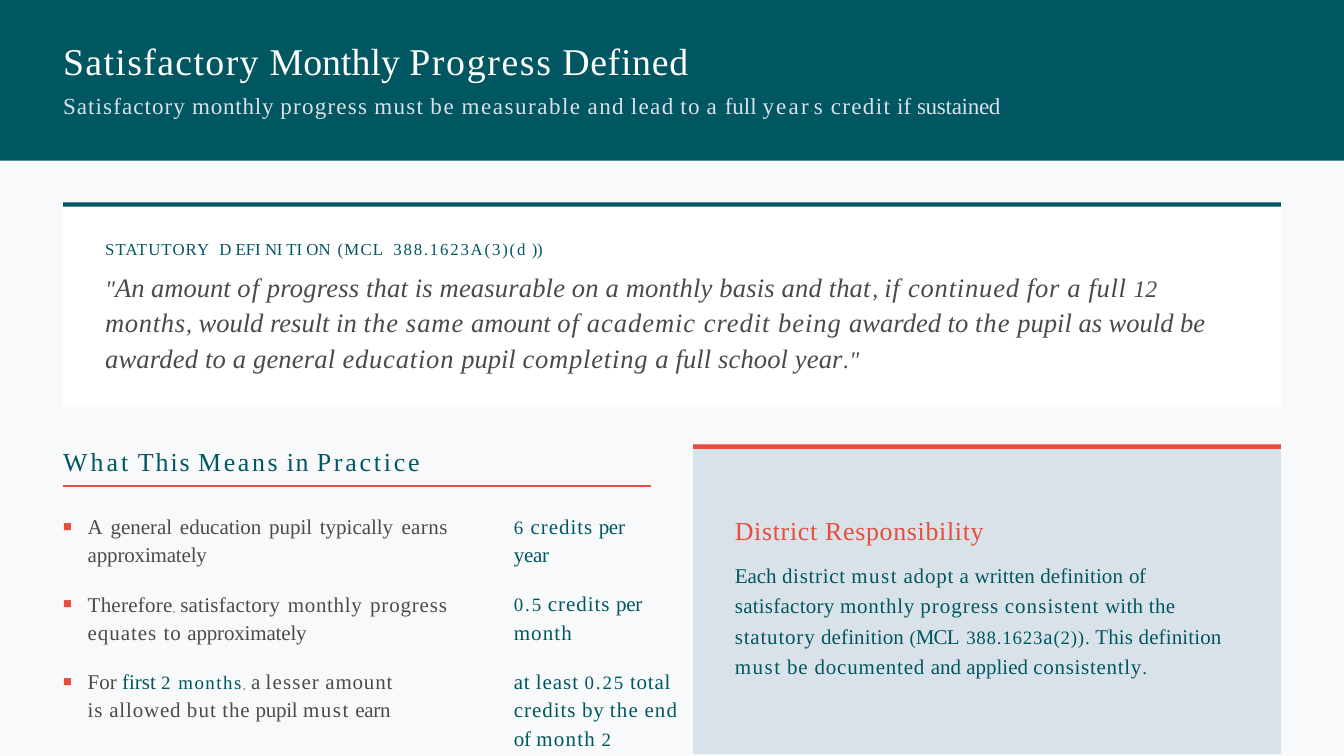
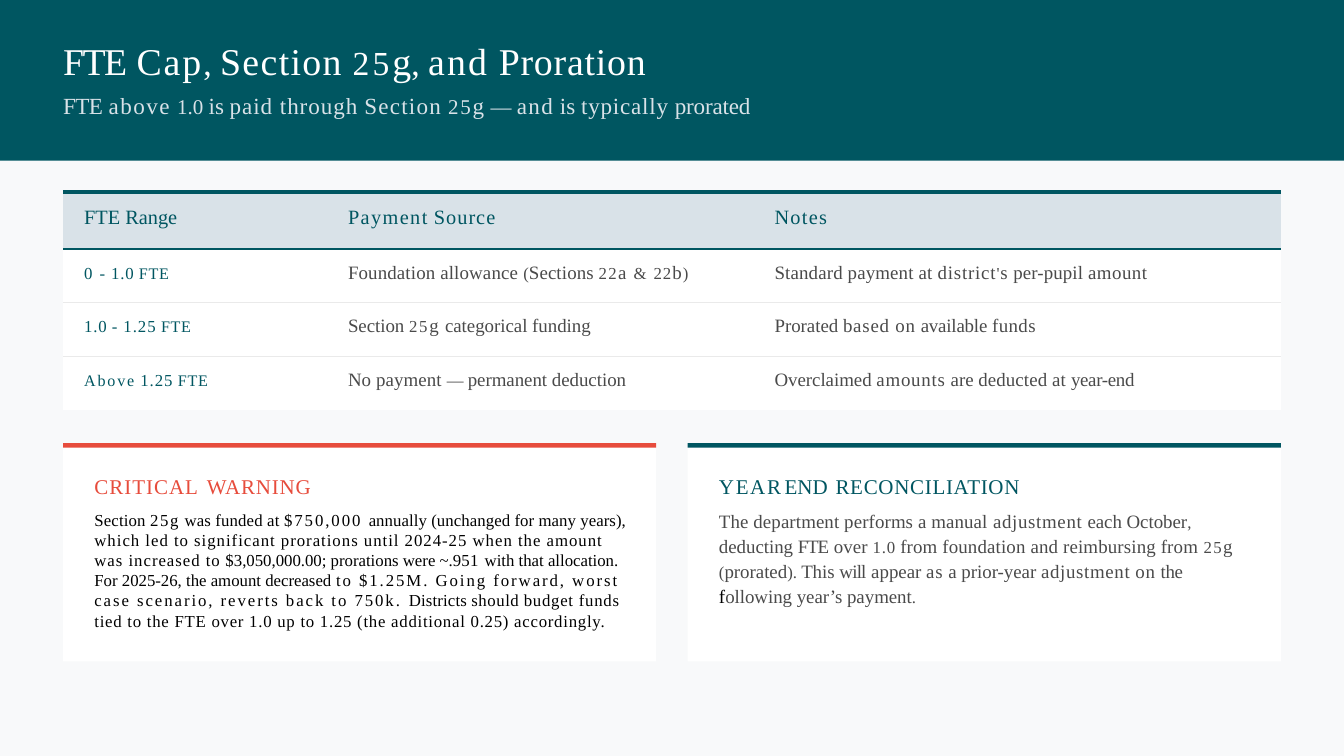
import pptx
import pptx.util
import pptx.dml.color
import pptx.enum.shapes
import pptx.enum.text
import pptx.oxml.ns
from lxml import etree

Cm, Pt = pptx.util.Cm, pptx.util.Pt
RGBColor = pptx.dml.color.RGBColor
qn = pptx.oxml.ns.qn
ALIGN = pptx.enum.text.PP_ALIGN
ANCHOR = pptx.enum.text.MSO_ANCHOR

TEAL = RGBColor(0x00, 0x56, 0x61)
RED = RGBColor(0xE7, 0x4C, 0x3C)
MIST = RGBColor(0xD9, 0xE2, 0xE8)
PAPER = RGBColor(0xF8, 0xF9, 0xFA)
WHITE = RGBColor(0xFF, 0xFF, 0xFF)
GREY = RGBColor(0x4A, 0x4A, 0x4A)
BLACK = RGBColor(0x00, 0x00, 0x00)
HAIR = RGBColor(0xEA, 0xEA, 0xEA)

FONT = "Times New Roman"
SLIDE_W, SLIDE_H = 33.87, 19.05
LEFT, WIDTH = 1.59, 30.69
BAR_H = 0.11
BREAK = ("\n",)

TITLE = dict(size=27, color=WHITE)
SUBTITLE = dict(size=16.5, color=MIST, line=20, before=5.6)
LABEL = dict(size=12, color=TEAL, line=14)
QUOTE = dict(size=19, color=GREY, line=25.4, before=6.1, italic=True)
HEADING = dict(size=18.5, color=TEAL)
ITEM = dict(size=15, color=GREY, line=20.2)
VALUE = dict(size=15, color=TEAL, line=20.2)
CARD_HEAD = dict(size=15, color=TEAL)
NO_STYLE = "{2D5ABB26-0587-4C30-8999-92F81FD0307C}"


def set_all(obj, values):
    """Set every attribute named in a dict."""
    for name, value in values.items():
        setattr(obj, name, value)


def add_runs(p, runs, size, color, italic=False):
    """Write (text, spacing, size, color) runs, leaving trailing spaces untracked."""
    for run in runs:
        if run == BREAK:
            p.add_line_break()
            continue
        text, spacing, own_size, own_color = (*run, None, None, None)[:4]
        word = text.rstrip(" ") if spacing else text
        parts = [(word, spacing), (text[len(word):], None)] if word else [(text, spacing)]
        for part, tracking in parts:
            if not part:
                continue
            r = p.add_run()
            r.text = part
            set_all(r.font, dict(name=FONT, size=Pt(own_size or size), italic=italic,
                                 bold=False))
            r.font.color.rgb = own_color or color
            if tracking:
                r.font._element.set("spc", str(round(tracking * 100)))


def add_bullet(p):
    """Give a paragraph a small red square and a hanging indent."""
    pPr = p._p.get_or_add_pPr()
    pPr.set("marL", str(Cm(0.62)))
    pPr.set("indent", str(-Cm(0.62)))
    color = etree.SubElement(pPr, qn("a:buClr"))
    etree.SubElement(color, qn("a:srgbClr"), val=str(RED))
    etree.SubElement(pPr, qn("a:buSzPct"), val="70000")
    etree.SubElement(pPr, qn("a:buChar"), char="■")


def fill_text(tf, paras, bullets=False):
    """Fill a text frame with (style, runs) paragraphs."""
    set_all(tf, dict(margin_left=0, margin_right=0, margin_top=0, margin_bottom=0,
                     word_wrap=True, vertical_anchor=ANCHOR.TOP,
                     auto_size=pptx.enum.text.MSO_AUTO_SIZE.NONE))
    for i, (style, runs) in enumerate(paras):
        p = tf.add_paragraph() if i else tf.paragraphs[0]
        style = dict(style)
        line = style.pop("line", style["size"] * 1.2)
        set_all(p, dict(alignment=style.pop("align", ALIGN.LEFT), line_spacing=Pt(line),
                        space_before=Pt(style.pop("before", 0)), space_after=Pt(0)))
        if bullets:
            add_bullet(p)
        add_runs(p, runs, **style)


def place(sp, x, y, w, h):
    """Move and size a shape in centimetres."""
    set_all(sp, dict(left=Cm(x), top=Cm(y), width=Cm(w), height=Cm(h)))


def add_text(s, x, y, w, h, paras):
    """Add a text box."""
    fill_text(s.shapes.add_textbox(Cm(x), Cm(y), Cm(w), Cm(h)).text_frame, paras)


def add_block(s, x, y, w, h, color):
    """Add a plain filled rectangle."""
    sp = s.shapes.add_shape(pptx.enum.shapes.MSO_SHAPE.RECTANGLE, Cm(x), Cm(y), Cm(w), Cm(h))
    sp.shadow.inherit = False
    sp.fill.solid()
    sp.fill.fore_color.rgb = color
    sp.line.fill.background()
    return sp


def add_card(s, x, y, w, h, fill, bar, inset, text_w, paras):
    """Add a card with a coloured top bar and inset text."""
    add_block(s, x, y, w, h, fill)
    add_block(s, x, y, w, BAR_H, bar)
    dx, dy = inset
    add_text(s, x + dx, y + dy, text_w, h - 2 * dy, paras)


def new_slide(prs, layout, title, subtitle):
    """Add a slide with the teal band, title and subtitle."""
    s = prs.slides.add_slide(prs.slide_layouts[layout])
    band = add_block(s, 0, 0, SLIDE_W, 4.05, TEAL)
    s.shapes._spTree.insert(2, band._element)
    place(s.shapes.title, LEFT, 0.95, WIDTH, 2.4)
    fill_text(s.shapes.title.text_frame, [(TITLE, title), (SUBTITLE, subtitle)])
    return s


def add_practice(s, x, y, w):
    """Add the heading, its rule, the bullets and their values."""
    add_text(s, x, y, w, 0.9, [(HEADING, [
        ("What ", 2.2), ("This ", 1.4), ("Means ", 1.9), ("in ", 1.2), ("Practice", 2)])])
    rule = s.shapes.add_connector(pptx.enum.shapes.MSO_CONNECTOR.STRAIGHT,
                                  Cm(x), Cm(y + 1.02), Cm(x + w), Cm(y + 1.02))
    rule.line.color.rgb = RED
    rule.line.width = Pt(1.5)
    etree.SubElement(rule._element.spPr, qn("a:effectLst"))
    body = s.placeholders[1]
    place(body, x, y + 1.64, 9.7, 6)
    gap = dict(before=15)
    justified = ITEM | dict(align=ALIGN.JUSTIFY)
    fill_text(body.text_frame, [
        (justified, [("A ", -1.7), ("general education pupil typically ",), ("earns ", 0.3),
                     ("approximately", -0.1)]),
        (justified | gap, [("Therefore", 0.2), (", ", 0.2, 7), ("satisfactory ", 0.2),
                           ("monthly ", 0.5), ("progress ", 0.6), ("equates to ", 0.7),
                           ("approximately", -0.1)]),
        (ITEM | gap, [("For ",), ("first ", 0, 15, TEAL), ("2 months", 1.1, 13.5, TEAL),
                      (", ", 2.3, 7), ("a ",), ("lesser ", 0.8), ("amount", 0.6), BREAK,
                      ("is allowed ", 0.6), ("but ", 0.8), ("the ", 0.6), ("pupil ", -0.2),
                      ("must ", 1.1), ("earn", -0.2)]),
    ], bullets=True)
    add_text(s, x + 11.36, y + 1.64, 4.4, 6, [
        (VALUE, [("6 ", 1.9, 13.5), ("credits ", 0.7), ("per", -0.2), BREAK, ("year", -0.2)]),
        (VALUE | gap, [("0.5 ", 1.4, 13.5), ("credits ", 0.7), ("per", -0.2), BREAK,
                       ("month", 0.8)]),
        (VALUE | gap, [("at ", 0.6), ("least ", 0.7), ("0.25 ", 1.4, 13.5), ("total", 0.6),
                       BREAK, ("credits ", 0.7), ("by ", 0.6), ("the ", 0.9), ("end", 0.8),
                       BREAK, ("of ", -0.2), ("month ", 0.9), ("2", 1.1, 13.5)]),
    ])


def progress_slide(prs):
    """Build the slide that defines satisfactory monthly progress."""
    s = new_slide(prs, 1, [
        ("Satisfactory ", 1), ("Monthly ",), ("Progress ", 1.2), ("Defined", 0.5)], [
        ("Satisfactory ", 0.8), ("monthly ", 0.6), ("progress ", 0.9), ("must ", 1),
        ("be ", 1.4), ("measurable ", 1.1), ("and ", 1), ("lead ", 1), ("to ", 0.9),
        ("a ", 1.6), ("full ",), ("year", 1.6), ("'", 1.4, 4), ("s ", 1.5), ("credit ", 1),
        ("if ",), ("sustained", -0.2)])
    add_card(s, LEFT, 5.1, WIDTH, 5.16, WHITE, TEAL, (1.06, 0.92), 28.14, [
        (LABEL, [("STATUTORY", 0.8), (" ", 3.3), ("D ", -0.4), ("EFI ",), ("NI ", -0.2),
                 ("TI ON",), (" ", 1.8), ("(MCL", 0.9), (" ", 3.3), ("388.1623A(3)(d ", 1.3),
                 ("))", -0.2)]),
        (QUOTE, [("\"", 0, 17), ("An amount ",), ("of ", 0.8),
                 ("progress that is measurable on a monthly basis and that", 0.15),
                 (", ", 0, 17), ("if continued ", 0.6), ("for a full ", 0.5),
                 ("12 ", -0.2, 17), ("months", 0.5),
                 (", ", 0.5, 17), ("would result in ",), ("the ", 0.8), ("same ", 0.7),
                 ("amount ",), ("of ", 0.8), ("academic credit being ", 0.7),
                 ("awarded to ",), ("the ", 0.8), ("pupil as would be ",),
                 ("awarded to a general ", 0.15), ("education ", 0.6), ("pupil ",),
                 ("completing ", 0.6), ("a full school year", 0.1), (".\"", 0, 17)])])
    add_practice(s, LEFT, 11.22, 14.82)
    add_card(s, 17.47, 11.2, 14.81, 7.8, MIST, RED, (1.05, 1.76), 12.6, [
        (HEADING | dict(color=RED), [("District Responsibility", 0.5)]),
        (VALUE | dict(line=21.6, before=8.7), [
            ("Each ",), ("district ", 0.5), ("must ", 1.1), ("adopt ", 0.6),
            ("a written definition ", 0.1), ("of ", -0.2), ("satisfactory ", 0.2),
            ("monthly ", 0.5), ("progress ", 0.7), ("consistent ", 0.8), ("with ", 0.2),
            ("the ", 0.3), ("statutory ", 0.6), ("definition ", 0.1), ("(", -0.6, 13.5),
            ("MCL", -0.6), (" ", 1), ("388.1623", 0.6, 13.5), ("a", 0.6),
            ("(2)). ", 0.6, 13.5), ("This definition ", 0.1), ("must ", 1.1),
            ("be documented ", 0.6), ("and applied ",), ("consistently", 0.5),
            (".", 0.5, 13.5)])])


def add_border(cell, edge, index, color, width):
    """Draw one edge of a table cell."""
    ln = etree.Element(qn("a:" + edge), w=str(Pt(width)))
    fill = etree.SubElement(ln, qn("a:solidFill"))
    etree.SubElement(fill, qn("a:srgbClr"), val=str(color))
    cell._tc.get_or_add_tcPr().insert(index, ln)


def add_range_table(s, x, y, w, tabs, row_heights, rows):
    """Add the payment table, whose ruled rows are set out by tab stops."""
    frame = s.shapes.add_table(len(rows), 1, Cm(x), Cm(y), Cm(w), Cm(sum(row_heights)))
    table = frame.table
    set_all(table, dict(first_row=False, horz_banding=False))
    table._tbl.tblPr.find(qn("a:tableStyleId")).text = NO_STYLE
    edges = [(TEAL, 3), (TEAL, 1.5)] + [(HAIR, 0.75)] * (len(rows) - 2)
    for i, row in enumerate(rows):
        table.rows[i].height = Cm(row_heights[i])
        cell = table.cell(i, 0)
        set_all(cell, dict(margin_left=Cm(0.53), margin_right=0, margin_top=0,
                           margin_bottom=Cm(0.15), vertical_anchor=ANCHOR.MIDDLE))
        cell.fill.solid()
        cell.fill.fore_color.rgb = WHITE if i else MIST
        for k, edge in enumerate(("lnT", "lnB")):
            if i + k < len(edges):
                add_border(cell, edge, k, *edges[i + k])
        p = cell.text_frame.paragraphs[0]
        stops = etree.SubElement(p._p.get_or_add_pPr(), qn("a:tabLst"))
        for tab in tabs:
            etree.SubElement(stops, qn("a:tab"), pos=str(Cm(tab)), algn="l")
        for j, runs in enumerate(row):
            size = 14.5 if i == 0 else 13.5 if j else 12
            lead = [("\t",)] if j else []
            add_runs(p, lead + runs, size, GREY if i and j else TEAL)


def proration_slide(prs):
    """Build the slide on the FTE cap and proration."""
    s = new_slide(prs, 5, [
        ("FTE ", -1.1), ("Cap", 1.4), (", ", 0, 24), ("Section ", 1), ("25", 2.2, 24),
        ("g",), (", ", 0, 24), ("and ", 1.6), ("Proration", 0.6)], [
        ("FTE ", -0.4), ("above ", 1.1), ("1.0 ", 0, 15), ("is ",), ("paid through ", 0.7),
        ("Section ", 0.9), ("25", 1.3, 15), ("g ", 0.5), ("— ", 0, 15), ("and ", 1),
        ("is ",), ("typically ", 0.6), ("prorated", -0.1)])
    add_range_table(s, LEFT, 4.84, WIDTH, [6.65, 17.4], [1.43, 1.35, 1.35, 1.35], [
        [[("FTE Range",)], [("Payment ", 1), ("Source", 0.7)], [("Notes", 0.9)]],
        [[("0 ", 2), ("- ", 1.3), ("1.0 ", 0.6), ("FTE", 0.5, 11.5)],
         [("Foundation allowance ", 0.13), ("(", 0, 12), ("Sections ", 0.1),
          ("22", 0.9, 12), ("a", 0.9), (" ", 1), ("&", -1.3, 12), (" ", 1.5),
          ("22", 0.7, 12), ("b", 0.7), (")", 0.7, 12)],
         [("Standard payment at ", 0.13), ("district", 0.6), ("'", 0.6, 12), ("s ", 0.6),
          ("per-pupil ", 0.1), ("amount", 0.4)]],
        [[("1.0 ", 0.6), ("- ", 1.3), ("1.25 ", 0.7), ("FTE", 0.5, 11.5)],
         [("Section ",), ("25", 1.2, 12), ("g ", 1.2), ("categorical funding",)],
         [("Prorated ",), ("based on ", 0.6), ("available ", -0.1), ("funds", 0.3)]],
        [[("Above ", 1.3, 11.5), ("1.25 ", 0.7), ("FTE", 0.5, 11.5)],
         [("No payment ", 0.1), ("— ", 0, 12), ("permanent deduction",)],
         [("Overclaimed ",), ("amounts ", 0.6), ("are ",), ("deducted at ", 0.1),
          ("year-end", -0.2)]],
    ])
    warning = [
        (CARD_HEAD | dict(color=RED), [("CRITICAL", 0.7), (" ", 1.7), ("WARNING", 0.6)]),
        (dict(size=12, color=BLACK, line=14.4, before=7.8), [
            ("Section ", 0.1), ("25g ", 1.2), ("was funded at ", 0.1), ("$750,000", 1.4),
            (" ", 1.4), ("annually (unchanged for many years), ", 0.05),
            ("which led to significant prorations until 2024-25 when the amount "
             "was increased to ", 0.7),
            ("$3,050,000.00; prorations were ~.95",), ("1", 1.4),
            (" with that allocation. For 2025-26, the amount decreased ",),
            ("to $1.25M. Going forward, worst case scenario, reverts back to 750k.", 1.4),
            (" ", 1.4), ("Districts ", 0.1), ("should ", 0.4),
            ("budget funds tied to the FTE over 1.0 up to 1.25 (the additional 0.25) "
             "accordingly.", 0.55)])]
    reconciliation = [
        (CARD_HEAD, [("YEAR", 1.2), ("- ", 0.4, 1.5), ("END",), (" ", 1.8),
                     ("RECONCILIATION", 0.5)]),
        (dict(size=13.5, color=GREY, line=17.9, before=6.4), [
            ("The department performs a manual ", 0.1), ("adjustment ", 0.5),
            ("each October",), (", ", 0, 12), ("deducting ",), ("FTE ", -0.8),
            ("over ", 0.1), ("1.0 ", 0.6, 12),
            ("from foundation and reimbursing from ", 0.15),
            ("25", 0.9, 12), ("g ", 0.9), ("(", 0, 12), ("prorated",), ("). ", 0, 12),
            ("This ",), ("will", -0.5), (" appear ",), ("as ", 0.7), ("a prior-year ",),
            ("adjustment ", 0.5), ("on ", 0.6), ("the", -0.2), BREAK,
            ("f", -0.2, 13.5, BLACK), ("ollowing year’s payment",), (".", 0, 12)])]
    card_w, gap = 14.95, 0.79
    for i, (bar, paras) in enumerate([(RED, warning), (TEAL, reconciliation)]):
        add_card(s, LEFT + i * (card_w + gap), 11.17, card_w, 5.5, WHITE, bar,
                 (0.79, 0.76), 13.58, paras)


def main():
    """Build and save the presentation."""
    prs = pptx.Presentation()
    set_all(prs, dict(slide_width=Cm(SLIDE_W), slide_height=Cm(SLIDE_H)))
    fill = prs.slide_master.background.fill
    fill.solid()
    fill.fore_color.rgb = PAPER
    progress_slide(prs)
    proration_slide(prs)
    prs.save("out.pptx")


if __name__ == "__main__":
    main()
